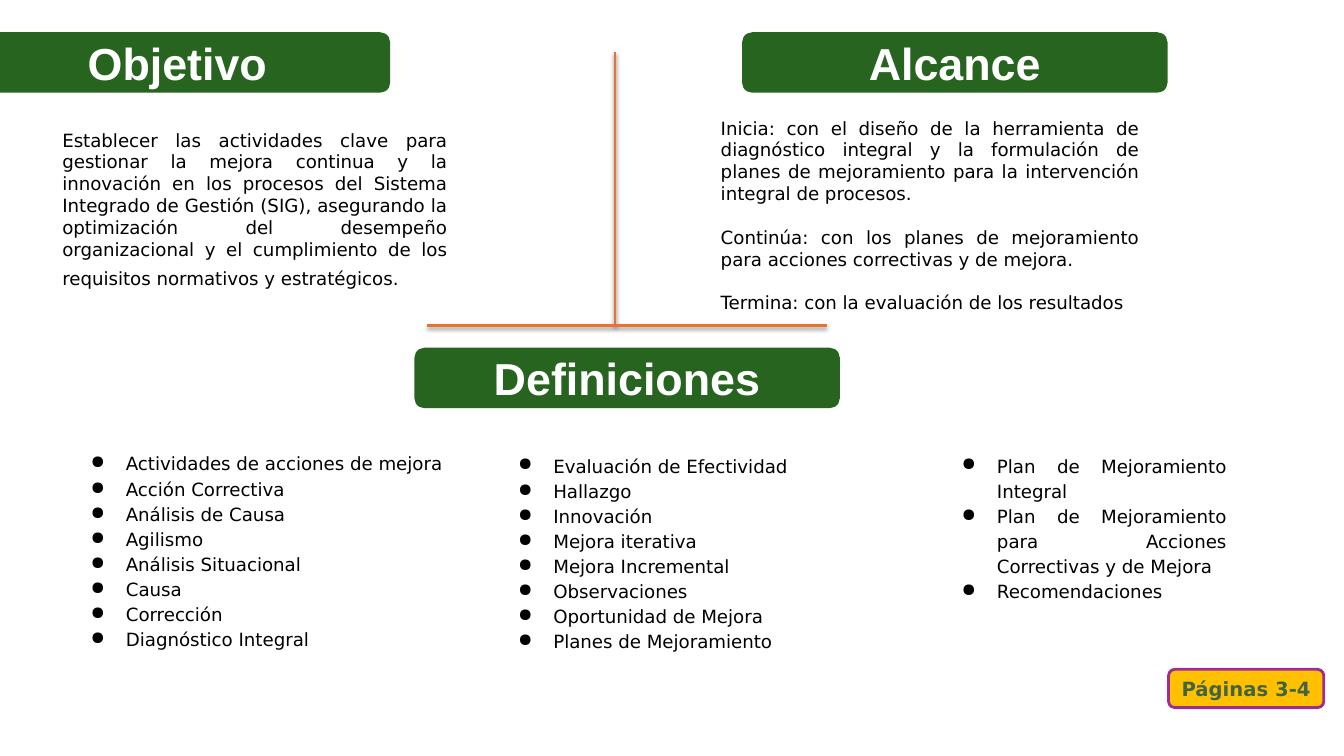
from lxml.etree import SubElement
from pptx import Presentation
from pptx.dml.color import RGBColor
from pptx.enum.shapes import MSO_CONNECTOR, MSO_SHAPE
from pptx.enum.text import MSO_ANCHOR, PP_ALIGN
from pptx.oxml.ns import qn
from pptx.util import Inches, Pt

COLORS = {
    "green": "27641F", "white": "FFFFFF", "black": "000000", "orange": "E97132",
    "gold": "FFC000", "purple": "A02B93", "moss": "436443",
}
BODY = "DejaVu Sans"
GOAL = (
    "Establecer las actividades clave para gestionar la mejora continua y la "
    "innovación en los procesos del Sistema Integrado de Gestión (SIG), "
    "asegurando la optimización del desempeño organizacional y el cumplimiento "
    "de los requisitos normativos y estratégicos."
)
SCOPE = [
    "Inicia: con el diseño de la herramienta de diagnóstico integral y la "
    "formulación de planes de mejoramiento para la intervención integral de procesos.",
    "Continúa: con los planes de mejoramiento para acciones correctivas y de mejora.",
    "Termina: con la evaluación de los resultados",
]
TERMS = [
    ((0.65, 4.36, 4.16, 1.9), [
        "Actividades de acciones de mejora", "Acción Correctiva",
        "Análisis de Causa", "Agilismo", "Análisis Situacional", "Causa",
        "Corrección", "Diagnóstico Integral"]),
    ((4.89, 4.38, 4.16, 1.9), [
        "Evaluación de Efectividad", "Hallazgo", "Innovación",
        "Mejora iterativa", "Mejora Incremental", "Observaciones",
        "Oportunidad de Mejora", "Planes de Mejoramiento"]),
    ((9.29, 4.38, 2.97, 1.9), [
        "Plan de Mejoramiento Integral",
        "Plan de Mejoramiento para Acciones Correctivas y de Mejora",
        "Recomendaciones"]),
]


def color(name):
    return RGBColor.from_string(COLORS[name])


def style(run, size, name, tint, bold=False):
    font = run.font
    font.size, font.name, font.bold = Pt(size), name, bold
    font.color.rgb = color(tint)


def add_pill(slide, box, text, fill, tint, size, face, edge=None):
    """Rounded label with bold centred text."""
    pill = slide.shapes.add_shape(MSO_SHAPE.ROUNDED_RECTANGLE, *map(Inches, box))
    pill.shadow.inherit = False
    pill.fill.solid()
    pill.fill.fore_color.rgb = color(fill)
    if edge:
        pill.line.color.rgb = color(edge)
        pill.line.width = Pt(2)
    else:
        pill.line.fill.background()
    frame = pill.text_frame
    frame.text = text
    frame.vertical_anchor = MSO_ANCHOR.MIDDLE
    para = frame.paragraphs[0]
    para.alignment = PP_ALIGN.CENTER
    style(para.runs[0], size, face, tint, True)


def add_header(slide, left, top, text):
    add_pill(slide, (left, top, 4.22, 0.6), text, "green", "white", 32, "Arial")


def add_text(slide, box, lines, left=0.15, hang=0):
    """Justified paragraphs in a wrapping box; returns its text frame."""
    frame = slide.shapes.add_textbox(*map(Inches, box)).text_frame
    frame.word_wrap = True
    frame.text = "\n".join(lines)
    for para in frame.paragraphs:
        para.alignment = PP_ALIGN.JUSTIFY
        props = para._p.get_or_add_pPr()
        props.set("marL", str(Inches(left)))
        props.set("indent", str(Inches(hang)))
        style(para.runs[0], 13, BODY, "black")
    return frame


def add_goal(slide, box):
    para = add_text(slide, box, [GOAL]).paragraphs[0]
    tail = para.add_run()
    tail.text = " "
    style(tail, 18, BODY, "black")


def add_scope(slide, box):
    for para in add_text(slide, box, SCOPE).paragraphs[1:]:
        para.space_before = Pt(15.5)


def add_terms(slide, box, terms):
    frame = add_text(slide, box, terms, 0.5, -0.35)
    frame.margin_top = frame.margin_bottom = Inches(0.1)
    for para in frame.paragraphs:
        props = para._p.get_or_add_pPr()
        tint = SubElement(props, qn("a:buClr"))
        SubElement(tint, qn("a:srgbClr"), val=COLORS["black"])
        SubElement(props, qn("a:buChar"), char="●")
        para.line_spacing = 1.15


def add_rule(slide, start, end):
    """Orange line with a soft shadow below it."""
    rule = slide.shapes.add_connector(
        MSO_CONNECTOR.STRAIGHT, *map(Inches, start + end))
    rule.line.color.rgb = color("orange")
    rule.line.width = Pt(2)
    effects = SubElement(rule._element.spPr, qn("a:effectLst"))
    shadow = SubElement(
        effects, qn("a:outerShdw"), blurRad=str(Pt(3.1)), dist=str(Pt(1.6)),
        dir="5400000", rotWithShape="0")
    tint = SubElement(shadow, qn("a:srgbClr"), val=COLORS["black"])
    SubElement(tint, qn("a:alpha"), val="38000")


def main():
    deck = Presentation()
    deck.slide_width, deck.slide_height = Inches(13.33), Inches(7.5)
    slide = deck.slides.add_slide(deck.slide_layouts[6])
    add_header(slide, -0.35, 0.32, "Objetivo")
    add_goal(slide, (0.37, 1.23, 4.16, 1.9))
    add_header(slide, 7.36, 0.32, "Alcance")
    add_scope(slide, (6.9, 1.11, 4.49, 2.02))
    add_rule(slide, (6.1, 0.52), (6.1, 3.23))
    add_rule(slide, (8.2, 3.23), (4.24, 3.23))
    add_header(slide, 4.11, 3.45, "Definiciones")
    for box, terms in TERMS:
        add_terms(slide, box, terms)
    add_pill(slide, (11.59, 6.64, 1.54, 0.38), "Páginas 3-4",
             "gold", "moss", 14, BODY, "purple")
    deck.save("out.pptx")


if __name__ == "__main__":
    main()
